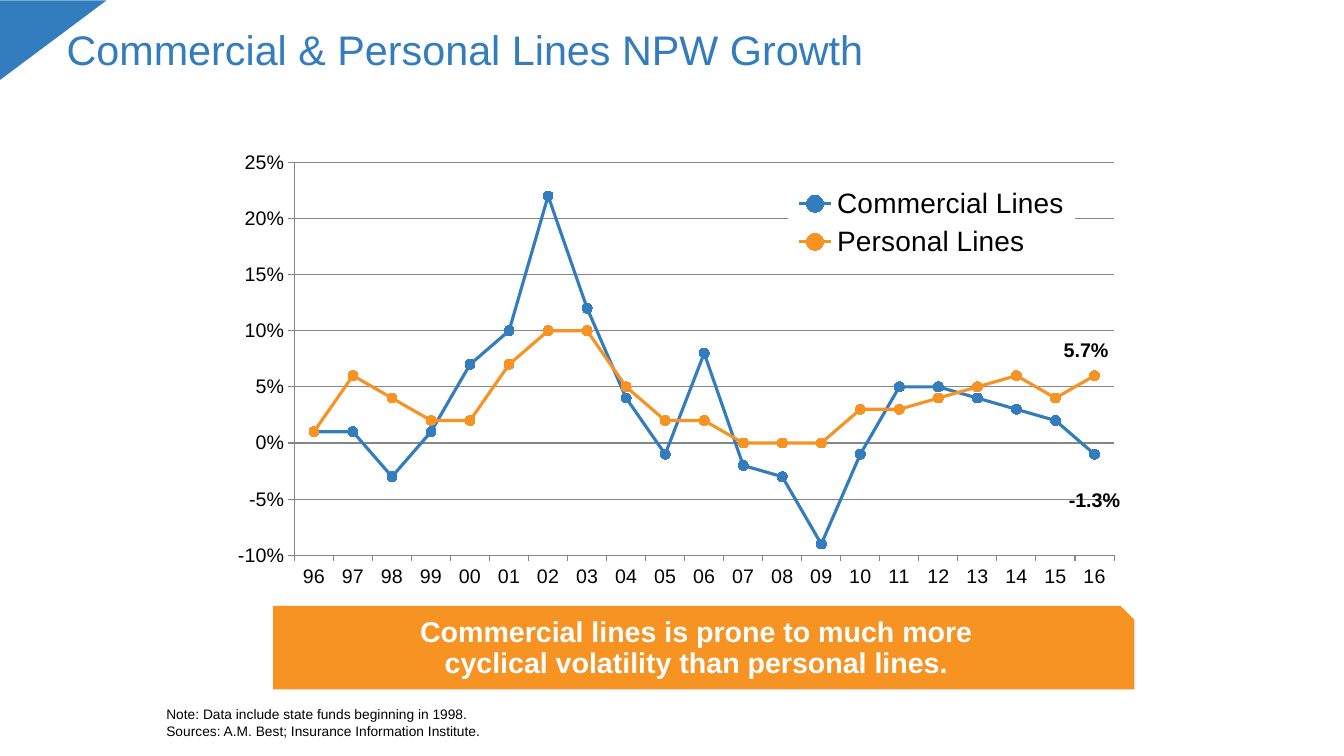
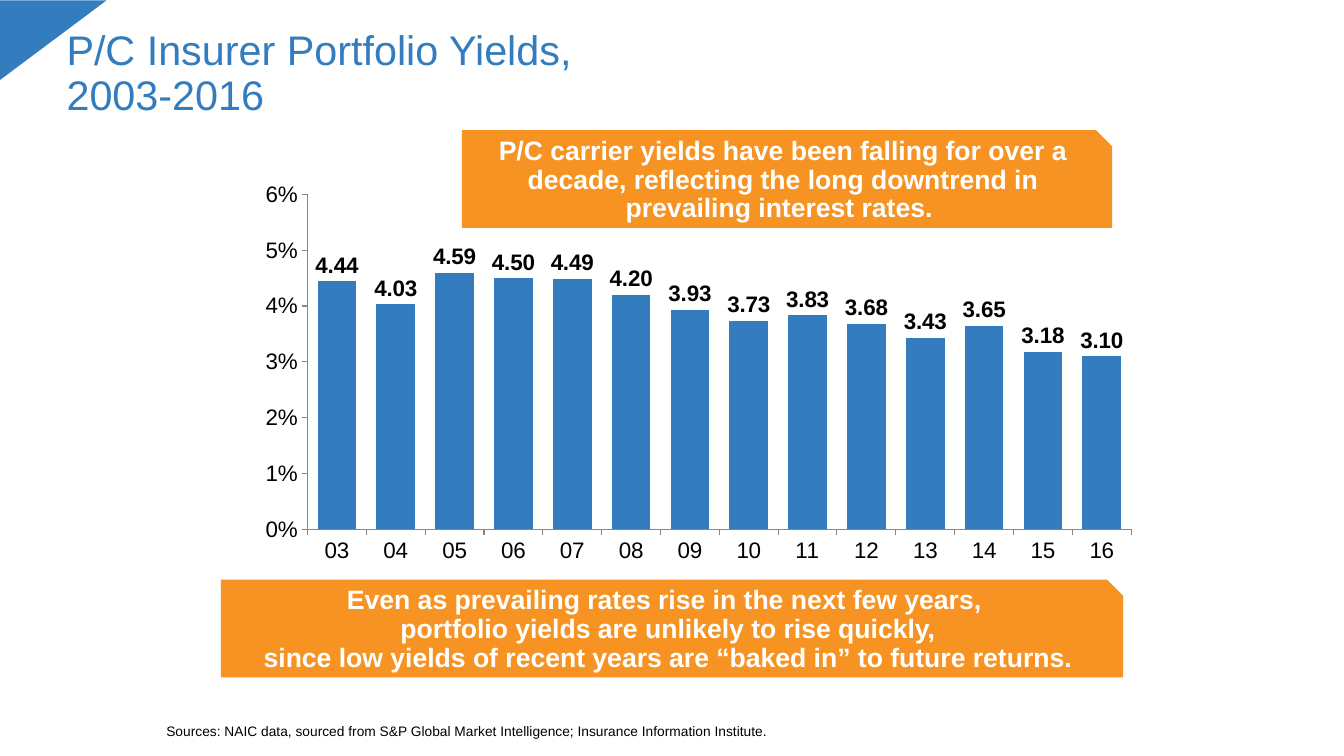
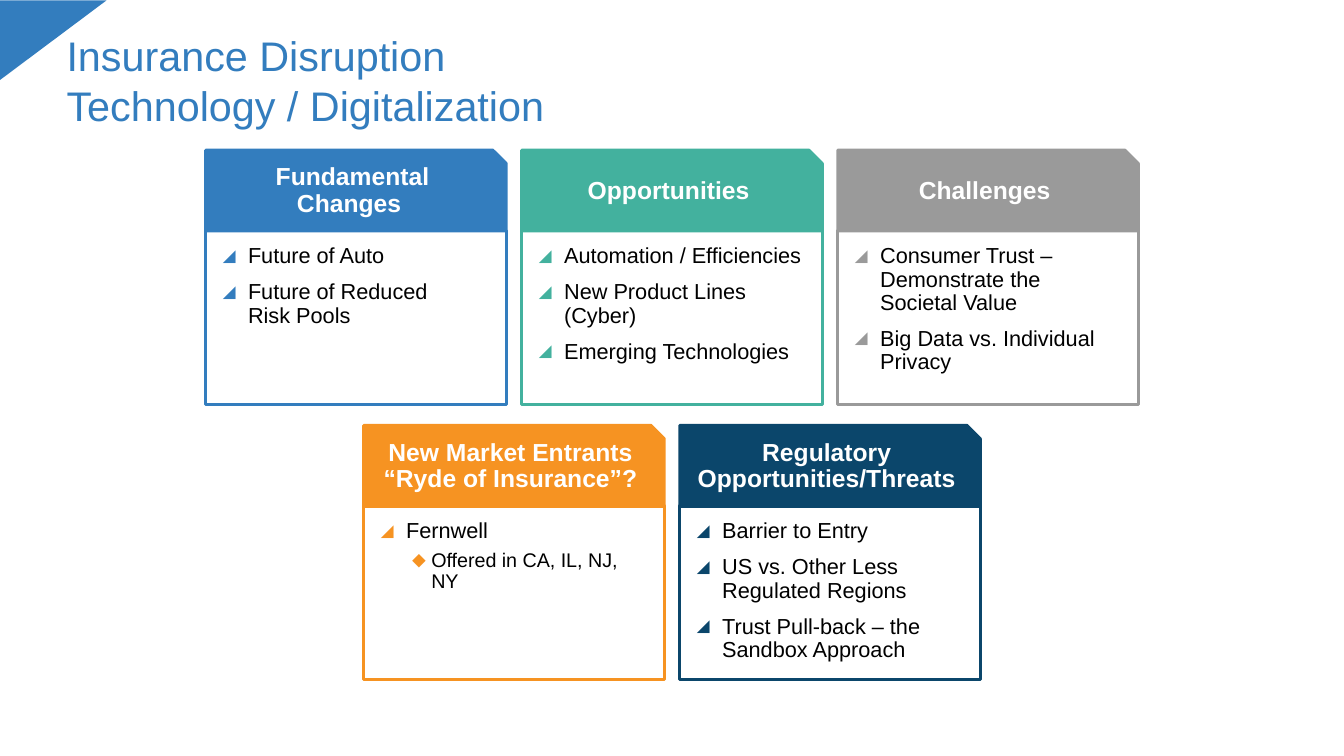
from copy import deepcopy
from dataclasses import dataclass

from lxml import etree
from pptx import Presentation
from pptx.chart.chart import Chart
from pptx.chart.data import CategoryChartData
from pptx.dml.color import RGBColor
from pptx.enum.chart import (XL_AXIS_CROSSES, XL_CHART_TYPE, XL_LABEL_POSITION, XL_LEGEND_POSITION,
                             XL_MARKER_STYLE, XL_TICK_LABEL_POSITION, XL_TICK_MARK)
from pptx.enum.shapes import MSO_SHAPE
from pptx.enum.text import MSO_ANCHOR, MSO_AUTO_SIZE, PP_ALIGN
from pptx.oxml.ns import qn
from pptx.presentation import Presentation as Deck
from pptx.shapes.autoshape import Shape
from pptx.slide import Slide
from pptx.text.text import TextFrame
from pptx.util import Inches, Pt

FONT = "Arial"
BLUE = RGBColor(0x33, 0x7D, 0xBE)
ORANGE = RGBColor(0xF6, 0x93, 0x22)
TEAL = RGBColor(0x43, 0xB1, 0x9E)
GRAY = RGBColor(0x9A, 0x9A, 0x9A)
NAVY = RGBColor(0x0B, 0x46, 0x6B)
AXIS_GRAY = RGBColor(0x86, 0x86, 0x86)
BLACK = RGBColor(0, 0, 0)
WHITE = RGBColor(0xFF, 0xFF, 0xFF)

LEFT, CENTER = PP_ALIGN.LEFT, PP_ALIGN.CENTER
TOP, MIDDLE, BOTTOM = MSO_ANCHOR.TOP, MSO_ANCHOR.MIDDLE, MSO_ANCHOR.BOTTOM
RECT, SNIPPED = MSO_SHAPE.RECTANGLE, MSO_SHAPE.SNIP_1_RECTANGLE
CORNER = MSO_SHAPE.RIGHT_TRIANGLE

SLIDE_WIDTH, SLIDE_HEIGHT = 13.33, 7.5
CARD_WIDTH, CARDS_SPAN = 2.98, 9.25
CARD_GAP = (CARDS_SPAN - 3 * CARD_WIDTH) / 2
HEADER_HEIGHT, BODY_HEIGHT = 0.8, 1.72

Box = tuple[float, float, float, float]


@dataclass(frozen=True)
class Bullet:
    char: str
    left: float
    hanging: float
    size_percent: int


@dataclass(frozen=True)
class Item:
    text: str
    sub: bool = False


@dataclass(frozen=True)
class Card:
    title: str
    color: RGBColor
    items: tuple[Item, ...]


@dataclass(frozen=True)
class Line:
    name: str
    color: RGBColor
    values: tuple[float, ...]


MAIN_BULLET = Bullet("◢", 0.25, 0.25, 77)
SUB_BULLET = Bullet("⬥", 0.5, 0.19, 100)

GROWTH = (
    Line("Commercial Lines", BLUE,
         (0.01, 0.01, -0.03, 0.01, 0.07, 0.1, 0.22, 0.12, 0.04, -0.01, 0.08,
          -0.02, -0.03, -0.09, -0.01, 0.05, 0.05, 0.04, 0.03, 0.02, -0.01)),
    Line("Personal Lines", ORANGE,
         (0.01, 0.06, 0.04, 0.02, 0.02, 0.07, 0.1, 0.1, 0.05, 0.02, 0.02,
          0, 0, 0, 0.03, 0.03, 0.04, 0.05, 0.06, 0.04, 0.06)),
)
YIELDS = (4.44, 4.03, 4.59, 4.5, 4.49, 4.2, 3.93, 3.73, 3.83, 3.68, 3.43, 3.65, 3.18, 3.1)

# Rows of cards by their top edge
CARD_ROWS = {
    1.49: (
        Card("Fundamental\nChanges ", BLUE,
             (Item("Future of Auto"), Item("Future of Reduced \nRisk Pools"))),
        Card("Opportunities", TEAL,
             (Item("Automation / Efficiencies"), Item("New Product Lines (Cyber)"),
              Item("Emerging Technologies"))),
        Card("Challenges", GRAY,
             (Item("Consumer Trust – Demonstrate the Societal Value"),
              Item("Big Data vs. Individual Privacy"))),
    ),
    4.22: (
        Card("New Market Entrants “Ryde of Insurance”?", ORANGE,
             (Item("Fernwell"), Item("Offered in CA, IL, NJ, NY", sub=True))),
        Card("Regulatory Opportunities/Threats", NAVY,
             (Item("Barrier to Entry"), Item("US vs. Other Less Regulated Regions"),
              Item("Trust Pull-back – the Sandbox Approach"))),
    ),
}


def inches(box: Box) -> list[int]:
    return [Inches(length) for length in box]


def years(first: int, last: int) -> list[str]:
    return [f"{year % 100:02d}" for year in range(first, last + 1)]


# Text
def write(frame: TextFrame, text: str, *, size: float, color: RGBColor = BLACK,
          bold: bool = False, align: PP_ALIGN = LEFT, anchor: MSO_ANCHOR = TOP,
          insets: Box = (0.1, 0.05, 0.1, 0.05), spacing: float = 0.9, before: float = 0,
          bullet: Bullet | None = None, bullet_color: RGBColor = BLACK,
          append: bool = False) -> None:
    """Write one paragraph; a newline in the text is a line break."""
    frame.word_wrap = True
    frame.auto_size = MSO_AUTO_SIZE.NONE
    frame.vertical_anchor = anchor
    (frame.margin_left, frame.margin_top,
     frame.margin_right, frame.margin_bottom) = inches(insets)
    paragraph = frame.add_paragraph() if append else frame.paragraphs[0]
    paragraph.text = text
    paragraph.alignment = align
    paragraph.line_spacing = spacing
    paragraph.space_before = Pt(before)
    if bullet:
        add_bullet(paragraph._p.get_or_add_pPr(), bullet, bullet_color)
    for run in paragraph.runs:
        run.font.name = FONT
        run.font.size = Pt(size)
        run.font.bold = bold
        run.font.color.rgb = color
    # Line breaks take the format of the text around them
    for line_break in paragraph._p.findall(qn("a:br")):
        line_break.insert(0, deepcopy(paragraph.runs[0]._r.rPr))


def add_bullet(properties: etree._Element, bullet: Bullet, color: RGBColor) -> None:
    properties.set("marL", str(Inches(bullet.left)))
    properties.set("indent", str(-Inches(bullet.hanging)))
    bullet_color = etree.SubElement(properties, qn("a:buClr"))
    etree.SubElement(bullet_color, qn("a:srgbClr"), val=str(color))
    etree.SubElement(properties, qn("a:buSzPct"), val=str(bullet.size_percent * 1000))
    etree.SubElement(properties, qn("a:buFont"), typeface=FONT)
    etree.SubElement(properties, qn("a:buChar"), char=bullet.char)


def add_text(slide: Slide, box: Box) -> TextFrame:
    return slide.shapes.add_textbox(*inches(box)).text_frame


# Shapes
def add_block(slide: Slide, preset: MSO_SHAPE, box: Box, fill: RGBColor,
              outline: RGBColor | None = None) -> Shape:
    block = slide.shapes.add_shape(preset, *inches(box))
    block.shadow.inherit = False
    block.fill.solid()
    block.fill.fore_color.rgb = fill
    if outline is None:
        block.line.fill.background()
    else:
        block.line.color.rgb = outline
        block.line.width = Pt(2.25)
    return block


def add_callout(slide: Slide, box: Box, text: str, *, size: float, insets: Box) -> None:
    callout = add_block(slide, SNIPPED, box, ORANGE)
    write(callout.text_frame, text, size=size, color=WHITE, bold=True,
          align=CENTER, anchor=MIDDLE, insets=insets)


def add_card(slide: Slide, left: float, top: float, card: Card) -> None:
    body_top = top + HEADER_HEIGHT
    add_block(slide, RECT, (left, body_top, CARD_WIDTH, BODY_HEIGHT), WHITE, card.color)
    header = add_block(slide, SNIPPED, (left, top, CARD_WIDTH, HEADER_HEIGHT),
                       card.color, card.color)
    write(header.text_frame, card.title, size=17.6, color=WHITE, bold=True,
          align=CENTER, anchor=MIDDLE, insets=(0.1, 0.05, 0.1, 0.1))
    frame = add_text(slide, (left + 0.12, body_top + 0.09, 2.75, 1.52))
    for index, item in enumerate(card.items):
        space = 5 if item.sub else 9
        write(frame, item.text, size=14.1 if item.sub else 15.5,
              insets=(0.05, 0.05, 0.05, 0.05), before=space if index else 0,
              bullet=SUB_BULLET if item.sub else MAIN_BULLET,
              bullet_color=card.color, append=index > 0)


# What the slides share
def prepare_layout(deck: Deck) -> None:
    """Place the title on the title-only layout."""
    layout = deck.slide_layouts[5]
    title = layout.placeholders[0]
    title.left, title.top, title.width, title.height = inches((0.56, 0.25, 12.33, 1.04))


def add_corner(deck: Deck, slide: Slide) -> None:
    """Draw the blue corner and move it to the shared layout."""
    corner = add_block(slide, CORNER, (0.12, -0.13, 0.8, 1.07), BLUE)
    corner.rotation = 90
    deck.slide_layouts[5].shapes.element.append(corner.element)


def add_slide(deck: Deck, title: str, spacing: float = 0.9) -> Slide:
    slide = deck.slides.add_slide(deck.slide_layouts[5])
    write(slide.shapes.title.text_frame, title, size=29.5, color=BLUE, spacing=spacing)
    return slide


def add_sources(slide: Slide, *lines: str) -> None:
    frame = add_text(slide, (1.65, 6.89, 11.2, 0.45))
    for index, line in enumerate(lines):
        write(frame, line, size=9.8, anchor=BOTTOM, insets=(0, 0, 0, 0),
              before=2 if index else 0, append=index > 0)


# Charts
def set_layout(parent: etree._Element, index: int, part: Box, frame: Box,
               inner: bool = False) -> None:
    """Fix a chart part, given in inches from the corner of the chart frame."""
    for previous in parent.findall(qn("c:layout")):
        parent.remove(previous)
    layout = etree.Element(qn("c:layout"))
    manual = etree.SubElement(layout, qn("c:manualLayout"))
    width, height = frame[2:]
    fractions = [str(length / whole) for length, whole in zip(part, (width, height) * 2)]
    settings = [("layoutTarget", "inner")] if inner else []
    settings += [("xMode", "edge"), ("yMode", "edge"), *zip("xywh", fractions)]
    for name, value in settings:
        etree.SubElement(manual, qn(f"c:{name}"), val=value)
    parent.insert(index, layout)


def add_chart(slide: Slide, kind: XL_CHART_TYPE, box: Box, data: CategoryChartData, *,
              plot: Box, tick_size: float, low: float, high: float, step: float,
              number_format: str, grid: bool) -> Chart:
    chart = slide.shapes.add_chart(kind, *inches(box), data).chart
    chart.has_title = False
    chart.has_legend = False
    chart.font.name = FONT
    chart.font.size = Pt(18)
    chart.font.color.rgb = BLACK
    chart.plots[0].vary_by_categories = False
    for axis in (chart.category_axis, chart.value_axis):
        axis.major_tick_mark = XL_TICK_MARK.OUTSIDE
        axis.minor_tick_mark = XL_TICK_MARK.NONE
        axis.tick_labels.font.size = Pt(tick_size)
        axis.format.line.color.rgb = AXIS_GRAY
        axis.format.line.width = Pt(0.75)
    chart.category_axis.tick_label_position = XL_TICK_LABEL_POSITION.LOW
    scale = chart.value_axis
    scale.minimum_scale, scale.maximum_scale, scale.major_unit = low, high, step
    scale.crosses = XL_AXIS_CROSSES.MINIMUM
    scale.tick_labels.number_format = number_format
    scale.tick_labels.number_format_is_linked = False
    scale.has_major_gridlines = grid
    if grid:
        scale.major_gridlines.format.line.color.rgb = AXIS_GRAY
        scale.major_gridlines.format.line.width = Pt(0.75)
    set_layout(chart.element.find(".//" + qn("c:plotArea")), 0, plot, box, inner=True)
    return chart


def add_legend(chart: Chart, part: Box, frame: Box) -> None:
    chart.has_legend = True
    chart.legend.position = XL_LEGEND_POSITION.TOP
    chart.legend.include_in_layout = False
    chart.legend.font.size = Pt(20)
    legend = chart.element.find(".//" + qn("c:legend"))
    set_layout(legend, 1, part, frame)
    # White backing over the gridlines
    backing = etree.Element(qn("c:spPr"))
    fill = etree.SubElement(backing, qn("a:solidFill"))
    etree.SubElement(fill, qn("a:srgbClr"), val=str(WHITE))
    legend.find(qn("c:txPr")).addprevious(backing)


def add_growth_chart(slide: Slide) -> None:
    data = CategoryChartData(number_format="0%")
    data.categories = years(1996, 2016)
    for line in GROWTH:
        data.add_series(line.name, line.values)
    box = (2.09, 1.37, 9.15, 4.63)
    chart = add_chart(slide, XL_CHART_TYPE.LINE_MARKERS, box, data,
                      plot=(0.83, 0.24, 8.13, 3.9), tick_size=14, low=-0.1, high=0.25,
                      step=0.05, number_format="0%", grid=True)
    for series, line in zip(chart.plots[0].series, GROWTH):
        series.smooth = False
        series.format.line.color.rgb = line.color
        series.format.line.width = Pt(2.25)
        series.marker.style = XL_MARKER_STYLE.CIRCLE
        series.marker.size = 7
        series.marker.format.fill.solid()
        series.marker.format.fill.fore_color.rgb = line.color
        series.marker.format.line.color.rgb = line.color
    add_legend(chart, (5.73, 0.43, 2.84, 0.82), box)


def add_yield_chart(slide: Slide) -> None:
    data = CategoryChartData(number_format="0.00")
    data.categories = years(2003, 2016)
    data.add_series("Series 1", YIELDS)
    chart = add_chart(slide, XL_CHART_TYPE.COLUMN_CLUSTERED, (2.19, 1.62, 9.12, 4.45), data,
                      plot=(0.86, 0.31, 8.17, 3.32), tick_size=16, low=0, high=6,
                      step=1, number_format='0"%"', grid=False)
    columns = chart.plots[0]
    columns.gap_width = 52
    columns.series[0].format.fill.solid()
    columns.series[0].format.fill.fore_color.rgb = BLUE
    columns.has_data_labels = True
    labels = columns.data_labels
    labels.show_value = True
    labels.position = XL_LABEL_POSITION.OUTSIDE_END
    labels.number_format = "#,##0.00"
    labels.number_format_is_linked = False
    labels.font.size = Pt(16)
    labels.font.bold = True


# Slides
def build_growth(deck: Deck) -> None:
    slide = add_slide(deck, "Commercial & Personal Lines NPW Growth")
    add_corner(deck, slide)
    add_sources(slide, "Note: Data include state funds beginning in 1998.",
                "Sources: A.M. Best; Insurance Information Institute.")
    add_growth_chart(slide)
    add_callout(slide, (2.71, 6.01, 8.54, 0.83),
                "Commercial lines is prone to much more \ncyclical volatility than personal lines. ",
                size=20.4, insets=(0.07, 0, 0.07, 0.05))
    for text, box in (("-1.3%", (10.53, 4.83, 0.91, 0.28)),
                      ("5.7%", (10.48, 3.34, 0.73, 0.28))):
        write(add_text(slide, box), text, size=14.1, bold=True, anchor=MIDDLE,
              insets=(0.07, 0.04, 0.07, 0.04))


def build_yields(deck: Deck) -> None:
    slide = add_slide(deck, "P/C Insurer Portfolio Yields,\n2003-2016")
    add_yield_chart(slide)
    add_sources(slide, "Sources: NAIC data, sourced from S&P Global Market Intelligence; "
                       "Insurance Information Institute.")
    callouts = (
        ((2.19, 5.75, 8.95, 0.97),
         "Even as prevailing rates rise in the next few years, \n"
         "portfolio yields are unlikely to rise quickly,\n"
         "since low yields of recent years are “baked in” to future returns."),
        ((4.58, 1.29, 6.45, 0.97),
         "P/C carrier yields have been falling for over a decade, "
         "reflecting the long downtrend in prevailing interest rates. "),
    )
    for box, text in callouts:
        add_callout(slide, box, text, size=19, insets=(0.1, 0.05, 0.1, 0.1))


def build_disruption(deck: Deck) -> None:
    slide = add_slide(deck, "Insurance Disruption\nTechnology / Digitalization", spacing=1.0)
    pitch = CARD_WIDTH + CARD_GAP
    for top, cards in CARD_ROWS.items():
        row_left = (SLIDE_WIDTH - len(cards) * pitch + CARD_GAP) / 2
        for column, card in enumerate(cards):
            add_card(slide, row_left + column * pitch, top, card)


def main() -> None:
    deck = Presentation()
    deck.slide_width, deck.slide_height = Inches(SLIDE_WIDTH), Inches(SLIDE_HEIGHT)
    prepare_layout(deck)
    build_growth(deck)
    build_yields(deck)
    build_disruption(deck)
    deck.save("out.pptx")


if __name__ == "__main__":
    main()
